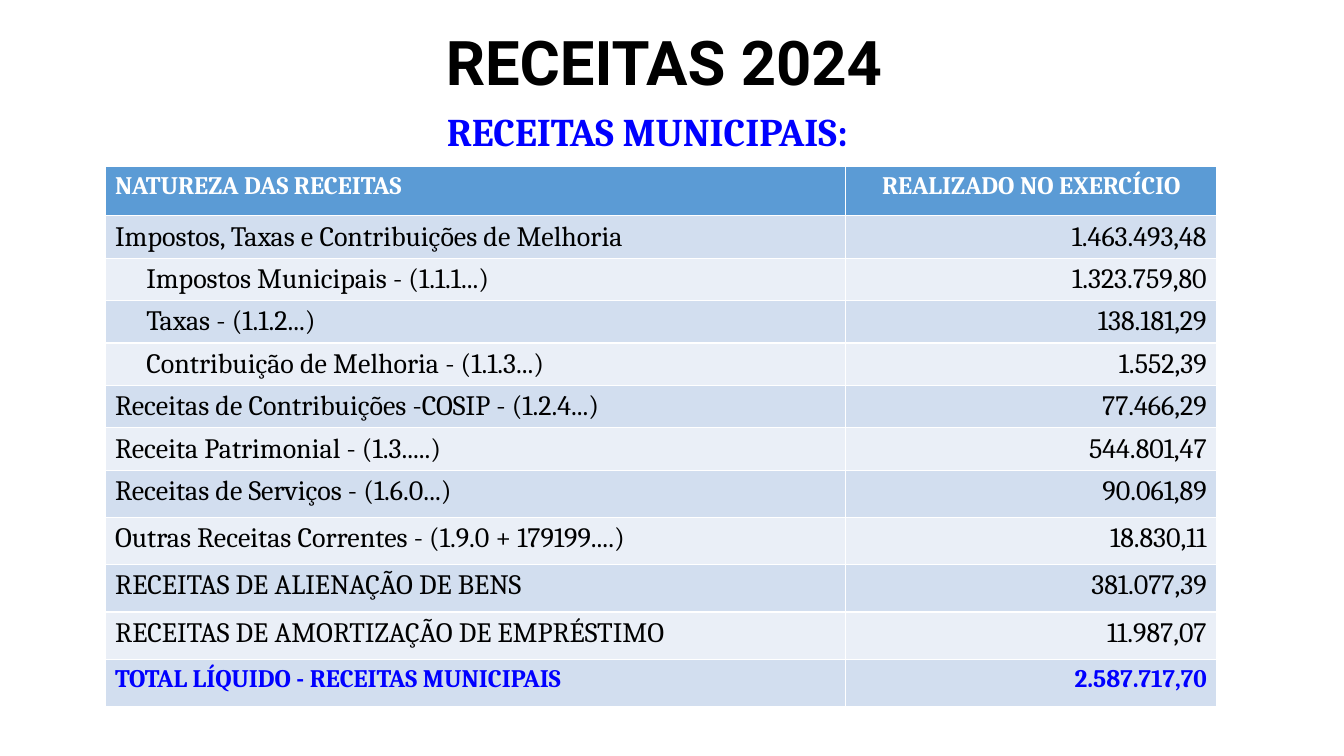
"""Builds the slide of municipal revenues for 2024."""
from dataclasses import dataclass

from pptx import Presentation
from pptx.dml.color import RGBColor
from pptx.enum.text import MSO_ANCHOR, MSO_AUTO_SIZE, PP_ALIGN as Align
from pptx.oxml.ns import qn
from pptx.util import Pt


@dataclass(frozen=True)
class Theme:
    """Fonts, colours and type sizes of the slide."""
    title_font: str = "Roboto"
    text_font: str = "Cambria"
    black: str = "000000"
    white: str = "FFFFFF"
    accent: str = "0000FF"
    header_fill: str = "5B9BD5"
    bands: tuple = ("D2DEEF", "EAEFF7")
    title_size: int = 44
    subtitle_size: int = 28
    entry_size: int = 20
    strong_size: int = 18


THEME = Theme()
HEADER = ("NATUREZA DAS RECEITAS", "REALIZADO NO EXERCÍCIO")
REVENUES = [
    (0, "Impostos, Taxas e Contribuições de Melhoria", "1.463.493,48"),
    (1, "Impostos Municipais - (1.1.1...)", "1.323.759,80"),
    (1, "Taxas - (1.1.2...)", "138.181,29"),
    (1, "Contribuição de Melhoria - (1.1.3...)", "1.552,39"),
    (0, "Receitas de Contribuições -COSIP - (1.2.4...)", "77.466,29"),
    (0, "Receita Patrimonial - (1.3.....)", "544.801,47"),
    (0, "Receitas de Serviços - (1.6.0...)", "90.061,89"),
    (0, "Outras Receitas Correntes - (1.9.0 + 179199....)", "18.830,11"),
    (0, "RECEITAS DE ALIENAÇÃO DE BENS", "381.077,39"),
    (0, "RECEITAS DE AMORTIZAÇÃO DE EMPRÉSTIMO", "11.987,07"),
]
TOTAL = ("TOTAL LÍQUIDO - RECEITAS MUNICIPAIS", "2.587.717,70")
COLUMN_WIDTHS = (529.2, 265)
ROW_HEIGHTS = [35.2] + [30.2] * 6 + [33.8] * 5
CELL_MARGIN, INDENT = 7.2, 22.3


def style_paragraph(paragraph, font_name, size, color, bold, alignment):
    """Set the font and alignment of a paragraph."""
    font = paragraph.font
    font.name, font.size, font.bold = font_name, Pt(size), bold
    font.color.rgb = RGBColor.from_string(color)
    paragraph.alignment = alignment


def fill_heading(shape, text, box, font_name, size, color, anchor):
    """Place a placeholder and give it one centred bold line."""
    shape.left, shape.top, shape.width, shape.height = map(Pt, box)
    frame = shape.text_frame
    frame.text = text
    frame.auto_size = MSO_AUTO_SIZE.NONE
    frame.vertical_anchor = anchor
    paragraph = frame.paragraphs[0]
    style_paragraph(paragraph, font_name, size, color, True, Align.CENTER)
    paragraph.line_spacing = 0.9
    return paragraph


def remove_bullet(paragraph):
    """Take away the bullet and the hanging indent of a paragraph."""
    properties = paragraph._p.get_or_add_pPr()
    properties.set("marL", "0")
    properties.set("indent", "0")
    properties.append(properties.makeelement(qn("a:buNone"), {}))


def fill_row(row, texts, fill, size, color, bold, value_align=Align.RIGHT, level=0):
    """Write the label and the value of one table row."""
    for cell, text, alignment in zip(row.cells, texts, (Align.LEFT, value_align)):
        cell.text = text
        cell.fill.solid()
        cell.fill.fore_color.rgb = RGBColor.from_string(fill)
        style_paragraph(cell.text_frame.paragraphs[0], THEME.text_font,
                        size, color, bold, alignment)
    row.cells[0].margin_left = Pt(CELL_MARGIN + level * INDENT)


def add_revenue_table(slide):
    """Add the table with header, banded revenues and total."""
    frame = slide.shapes.add_table(
        len(ROW_HEIGHTS), len(COLUMN_WIDTHS), Pt(75), Pt(119),
        Pt(sum(COLUMN_WIDTHS)), Pt(sum(ROW_HEIGHTS)))
    table = frame.table
    for column, width in zip(table.columns, COLUMN_WIDTHS):
        column.width = Pt(width)
    rows = list(table.rows)
    for row, height in zip(rows, ROW_HEIGHTS):
        row.height = Pt(height)
    fill_row(rows[0], HEADER, THEME.header_fill, THEME.strong_size,
             THEME.white, True, Align.CENTER)
    for index, (level, *texts) in enumerate(REVENUES):
        fill_row(rows[index + 1], texts, THEME.bands[index % 2],
                 THEME.entry_size, THEME.black, False, level=level)
    fill_row(rows[-1], TOTAL, THEME.bands[len(REVENUES) % 2],
             THEME.strong_size, THEME.accent, True)


def main():
    """Build and save the presentation."""
    presentation = Presentation()
    presentation.slide_width, presentation.slide_height = Pt(960), Pt(540)
    slide = presentation.slides.add_slide(presentation.slide_layouts[1])
    fill_heading(slide.shapes.title, "RECEITAS 2024 ", (66, 16.5, 828, 60.5),
                 THEME.title_font, THEME.title_size, THEME.black, MSO_ANCHOR.MIDDLE)
    subtitle = fill_heading(
        slide.placeholders[1], "RECEITAS MUNICIPAIS: ", (66, 77, 799, 42),
        THEME.text_font, THEME.subtitle_size, THEME.accent, MSO_ANCHOR.TOP)
    subtitle.space_before = Pt(10)
    remove_bullet(subtitle)
    add_revenue_table(slide)
    presentation.save("out.pptx")


if __name__ == "__main__":
    main()
